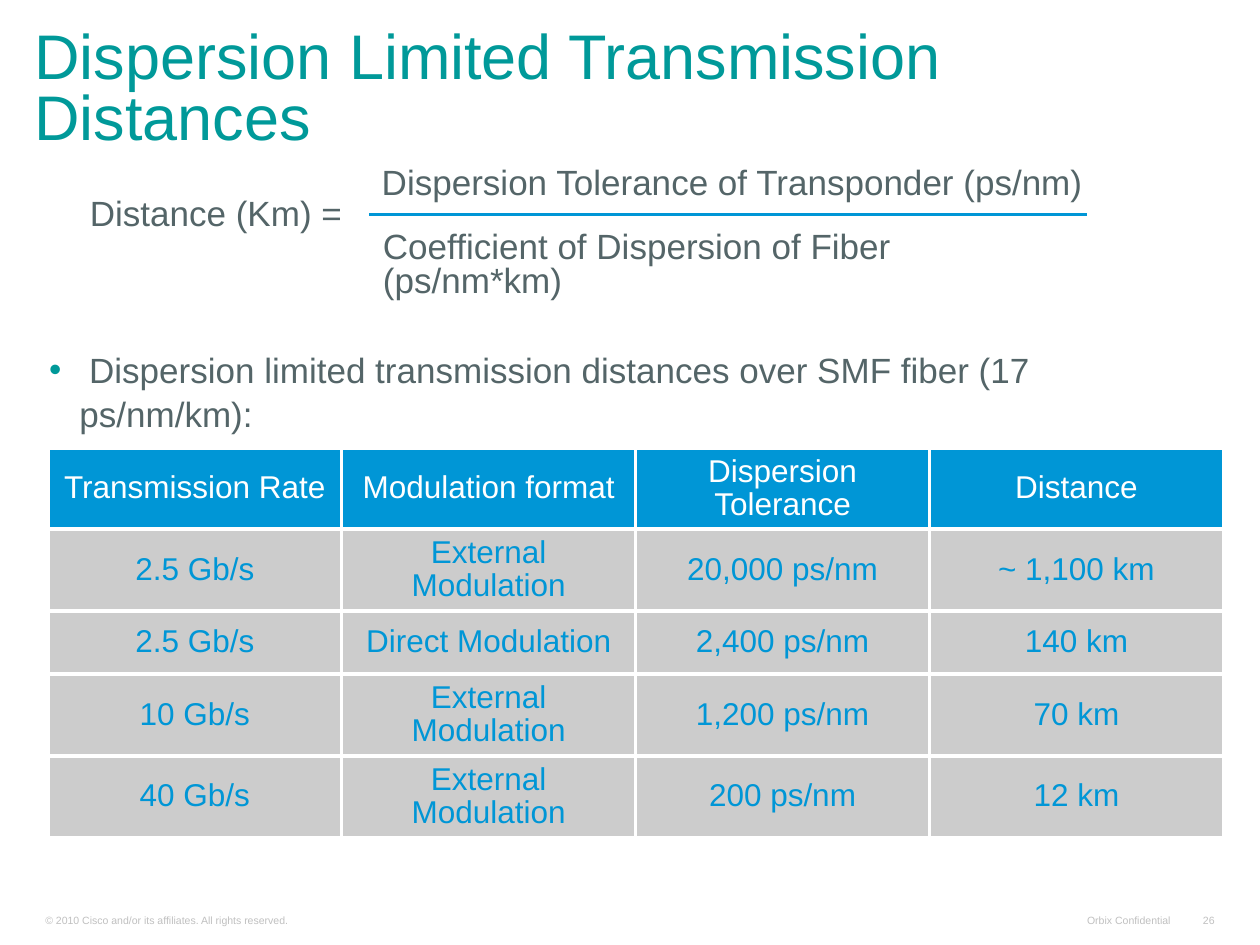
from lxml import etree
from pptx import Presentation
from pptx.dml.color import RGBColor
from pptx.enum.shapes import MSO_CONNECTOR
from pptx.enum.text import MSO_ANCHOR, MSO_AUTO_SIZE, PP_ALIGN
from pptx.oxml.ns import qn
from pptx.util import Inches, Pt

LEFT, CENTER, RIGHT = PP_ALIGN.LEFT, PP_ALIGN.CENTER, PP_ALIGN.RIGHT
TOP, MIDDLE, BOTTOM = MSO_ANCHOR.TOP, MSO_ANCHOR.MIDDLE, MSO_ANCHOR.BOTTOM
STRAIGHT = MSO_CONNECTOR.STRAIGHT
FIXED = MSO_AUTO_SIZE.NONE

FONT = "Arial"
COLORS = {"teal": "009999", "text": "546568", "blue": "0096D6",
          "cell": "CCCCCC", "white": "FFFFFF", "foot": "C0C0C0"}
COLS, ROWS = 100, 75  # layout grid over the slide

RATES = [
    ["Transmission Rate", "Modulation format", "Dispersion Tolerance", "Distance"],
    ["2.5 Gb/s", "External Modulation", "20,000 ps/nm", "~ 1,100 km"],
    ["2.5 Gb/s", "Direct Modulation", "2,400 ps/nm", "140 km"],
    ["10 Gb/s", "External Modulation", "1,200 ps/nm", "70 km"],
    ["40 Gb/s", "External Modulation", "200 ps/nm", "12 km"],
]


def rgb(name):
    return RGBColor.from_string(COLORS[name])


class Page:
    def __init__(self, deck):
        self.unit_x = deck.slide_width / COLS
        self.unit_y = deck.slide_height / ROWS
        self.slide = deck.slides.add_slide(deck.slide_layouts[1])
        self.shapes = self.slide.shapes

    def grid(self, x, y, w, h):
        return (round(x * self.unit_x), round(y * self.unit_y),
                round(w * self.unit_x), round(h * self.unit_y))

    def style(self, frame, text, size, color, align=LEFT, space=1.0):
        frame.text = text
        para = frame.paragraphs[0]
        para.alignment, para.line_spacing = align, space
        para.space_before = Pt(0)
        font = para.runs[0].font
        font.name, font.size = FONT, Pt(size)
        font.color.rgb = rgb(color)
        return para

    def frame(self, shape, anchor, side, edge):
        frame = shape.text_frame
        frame.word_wrap, frame.auto_size = True, FIXED
        frame.vertical_anchor = anchor
        frame.margin_left = frame.margin_right = Inches(side)
        frame.margin_top = frame.margin_bottom = Inches(edge)
        return frame

    def holder(self, index, area, anchor):
        shape = self.slide.placeholders[index]
        shape.left, shape.top, shape.width, shape.height = self.grid(*area)
        return self.frame(shape, anchor, 0.1, 0.05)

    def title(self, text, area):
        self.style(self.holder(0, area, BOTTOM), text, 36, "teal", space=0.8)

    def bullet(self, text, area):
        para = self.style(self.holder(1, area, TOP), text, 20, "text", space=1.05)
        props = para._p.get_or_add_pPr()
        props.set("marL", str(Inches(0.24)))
        props.set("indent", str(-Inches(0.24)))
        tint = etree.SubElement(props, qn("a:buClr"))
        etree.SubElement(tint, qn("a:srgbClr")).set("val", COLORS["teal"])
        etree.SubElement(props, qn("a:buChar")).set("char", "•")

    def label(self, text, area, size=20, color="text", align=LEFT,
              space=0.8, anchor=TOP):
        box = self.shapes.add_textbox(*self.grid(*area))
        self.style(self.frame(box, anchor, 0.08, 0.04), text, size, color, align, space)

    def rule(self, x, y, w):
        left, top, width, _ = self.grid(x, y, w, 0)
        line = self.shapes.add_connector(STRAIGHT, left, top, left + width, top)
        line.line.color.rgb, line.line.width = rgb("blue"), Pt(1.5)
        etree.SubElement(line._element.spPr, qn("a:effectLst"))

    def border(self, cell):
        props = cell._tc.get_or_add_tcPr()
        for at, side in enumerate(("lnL", "lnR", "lnT", "lnB")):
            edge = etree.Element(qn("a:" + side), w=str(Pt(2.25)))
            fill = etree.SubElement(edge, qn("a:solidFill"))
            etree.SubElement(fill, qn("a:srgbClr")).set("val", COLORS["white"])
            props.insert(at, edge)

    def table(self, data, area, heights):
        table = self.shapes.add_table(len(data), len(data[0]), *self.grid(*area)).table
        for row, high in zip(table.rows, heights):
            row.height = round(high * self.unit_y)
        for r, line in enumerate(data):
            ink, back = ("white", "blue") if r == 0 else ("blue", "cell")
            for c, text in enumerate(line):
                cell = table.cell(r, c)
                cell.fill.solid()
                cell.fill.fore_color.rgb = rgb(back)
                cell.vertical_anchor = MIDDLE
                cell.margin_left = cell.margin_right = Inches(0.08)
                cell.margin_top = cell.margin_bottom = Inches(0.04)
                self.style(cell.text_frame, text, 18, ink, CENTER, 0.95)
                self.border(cell)


def main():
    deck = Presentation()
    deck.slide_width, deck.slide_height = Inches(10), Inches(7.5)
    page = Page(deck)

    # Footer
    for text, x, w, align in (
            ("© 2010 Cisco and/or its affiliates. All rights reserved.", 2.8, 37.4, LEFT),
            ("Orbix Confidential", 80, 13.7, RIGHT),
            ("26", 93.5, 3.7, RIGHT)):
        page.label(text, (x, 72, w, 1.9), 6, "foot", align, 1.0, BOTTOM)

    # Heading
    page.title("Dispersion Limited Transmission Distances", (1.7, 0.7, 95, 11.9))

    # Distance formula
    page.label("Distance (Km) =", (3.8, 15.4, 26.7, 3.5), align=CENTER)
    page.label("Dispersion Tolerance of Transponder (ps/nm)", (29.5, 13, 59, 3.5))
    page.rule(29.3, 17, 57)
    page.label("Coefficient of Dispersion of Fiber (ps/nm*km)", (29.6, 18.1, 55, 6))

    # Distances by rate
    page.bullet(" Dispersion limited transmission distances over SMF fiber "
                "(17 ps/nm/km):", (2.9, 27, 93, 7.5))
    page.table(RATES, (3.8, 35.6, 93.3, 30.9), (6.4, 6.5, 5, 6.5, 6.5))

    deck.save("out.pptx")


if __name__ == "__main__":
    main()
